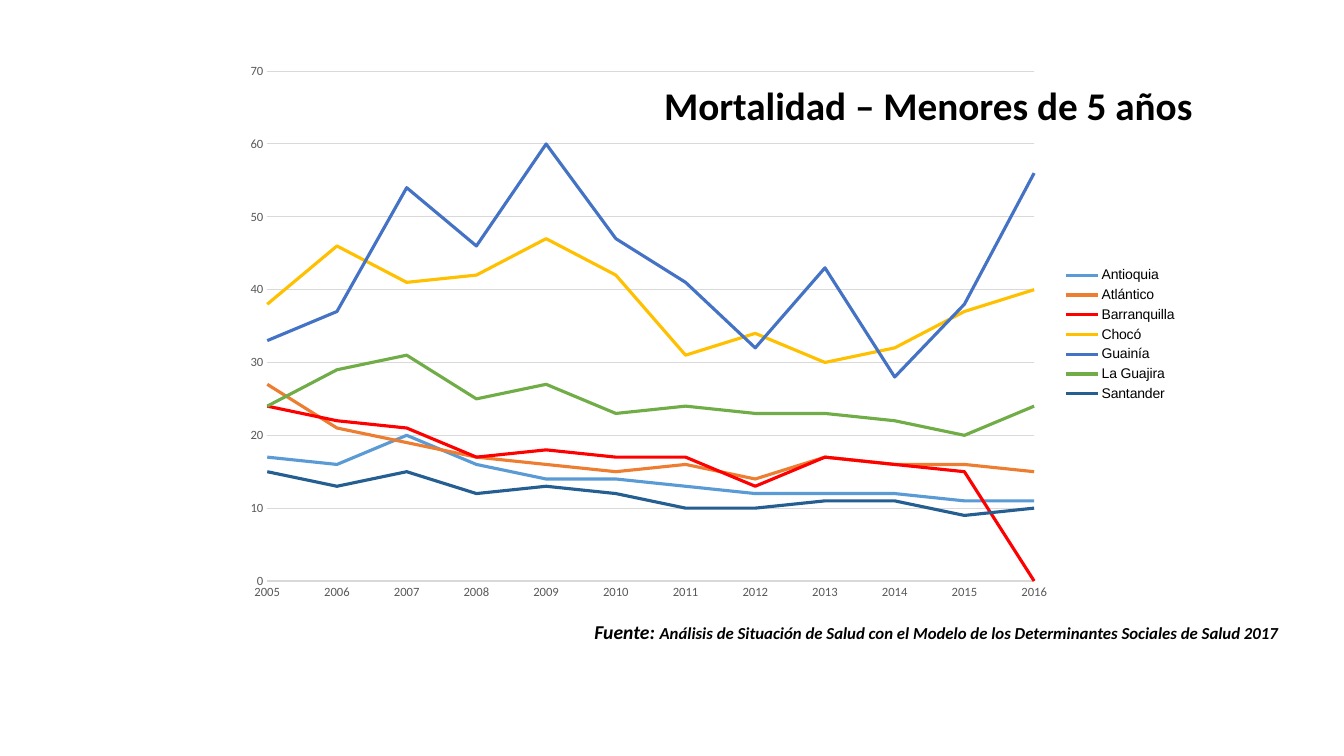
from dataclasses import dataclass

import lxml.etree
import pptx
import pptx.chart.axis
import pptx.chart.chart
import pptx.chart.data
import pptx.dml.color
import pptx.enum.chart
import pptx.enum.text
import pptx.oxml
import pptx.oxml.ns
import pptx.shapes.base
import pptx.text.text
import pptx.util
from pptx.util import Cm, Pt


@dataclass(frozen=True)
class Theme:
    text: str = "000000"
    axis_text: str = "595959"
    rule: str = "D9D9D9"
    font: str = "Calibri"
    legend_font: str = "Arial"
    title_size: float = 28
    source_label_size: float = 14
    source_size: float = 12
    legend_size: float = 10
    axis_size: float = 9
    rule_width: float = 0.75
    series_width: float = 2.25


@dataclass(frozen=True)
class Box:
    left: float
    top: float
    width: float
    height: float


@dataclass(frozen=True)
class Region:
    name: str
    color: str
    rates: tuple[int, ...]


THEME = Theme()
TITLE_BOX = Box(16.48, 1.93, 14.3, 1.45)
SOURCE_BOX = Box(14.73, 15.49, 17.83, 1.42)
CHART_BOX = Box(5.77, 1.37, 24.16, 14.12)
PLOT_FRACTIONS = {"x": 0.04, "y": 0.03, "w": 0.8, "h": 0.91}
YEARS = [str(year) for year in range(2005, 2017)]
REGIONS = [
    Region("Antioquia", "5B9BD5", (17, 16, 20, 16, 14, 14, 13, 12, 12, 12, 11, 11)),
    Region("Atlántico", "ED7D31", (27, 21, 19, 17, 16, 15, 16, 14, 17, 16, 16, 15)),
    Region("Barranquilla", "FF0000", (24, 22, 21, 17, 18, 17, 17, 13, 17, 16, 15, 0)),
    Region("Chocó", "FFC000", (38, 46, 41, 42, 47, 42, 31, 34, 30, 32, 37, 40)),
    Region("Guainía", "4472C4", (33, 37, 54, 46, 60, 47, 41, 32, 43, 28, 38, 56)),
    Region("La Guajira", "70AD47", (24, 29, 31, 25, 27, 23, 24, 23, 23, 22, 20, 24)),
    Region("Santander", "255E91", (15, 13, 15, 12, 13, 12, 10, 10, 11, 11, 9, 10)),
]


def rgb(color: str) -> pptx.dml.color.RGBColor:
    return pptx.dml.color.RGBColor.from_string(color)


def box_lengths(box: Box) -> tuple[pptx.util.Length, ...]:
    return Cm(box.left), Cm(box.top), Cm(box.width), Cm(box.height)


def style_font(font: pptx.text.text.Font, name: str, size: float, color: str) -> None:
    font.name, font.size = name, Pt(size)
    font.color.rgb = rgb(color)


def add_bold_run(paragraph: pptx.text.text._Paragraph, text: str, size: float,
                 italic: bool = False) -> None:
    run = paragraph.add_run()
    run.text = text
    style_font(run.font, THEME.font, size, THEME.text)
    run.font.bold, run.font.italic = True, italic


def prepare_text(shape: pptx.shapes.base.BaseShape, wrap: bool) -> pptx.text.text._Paragraph:
    frame = shape.text_frame
    frame.word_wrap = wrap
    frame.auto_size = pptx.enum.text.MSO_AUTO_SIZE.NONE
    frame.vertical_anchor = pptx.enum.text.MSO_ANCHOR.TOP
    paragraph = frame.paragraphs[0]
    paragraph.alignment = pptx.enum.text.PP_ALIGN.LEFT
    return paragraph


def style_axis(axis: pptx.chart.axis._BaseAxis) -> None:
    axis.major_tick_mark = axis.minor_tick_mark = pptx.enum.chart.XL_TICK_MARK.NONE
    style_font(axis.tick_labels.font, THEME.font, THEME.axis_size, THEME.axis_text)


def style_rule(line: pptx.dml.line.LineFormat) -> None:
    line.color.rgb = rgb(THEME.rule)
    line.width = Pt(THEME.rule_width)


def set_chart_frame(chart: pptx.chart.chart.Chart) -> None:
    """Fix the plot area, clear the background and start the lines on the value axis."""
    qn = pptx.oxml.ns.qn
    chart_space = chart.element
    plot_area = chart_space.find(".//" + qn("c:plotArea"))
    for layout in plot_area.findall(qn("c:layout")):
        plot_area.remove(layout)
    layout = lxml.etree.Element(qn("c:layout"))
    manual = lxml.etree.SubElement(layout, qn("c:manualLayout"))
    settings = {"layoutTarget": "inner", "xMode": "edge", "yMode": "edge", **PLOT_FRACTIONS}
    for tag, value in settings.items():
        lxml.etree.SubElement(manual, qn("c:" + tag)).set("val", str(value))
    plot_area.insert(0, layout)

    background = pptx.oxml.parse_xml(
        f"<c:spPr {pptx.oxml.ns.nsdecls('c', 'a')}><a:noFill/><a:ln><a:noFill/></a:ln></c:spPr>")
    chart_space.find(qn("c:chart")).addnext(background)

    value_axis = plot_area.find(qn("c:valAx"))
    crossing = value_axis.find(qn("c:crossBetween"))
    if crossing is None:
        crossing = lxml.etree.Element(qn("c:crossBetween"))
        value_axis.find(qn("c:crosses")).addnext(crossing)
    crossing.set("val", "midCat")


def add_mortality_chart(slide: pptx.slide.Slide) -> None:
    data = pptx.chart.data.CategoryChartData(number_format="General")
    data.categories = YEARS
    for region in REGIONS:
        data.add_series(region.name, region.rates)
    chart = slide.shapes.add_chart(
        pptx.enum.chart.XL_CHART_TYPE.LINE, *box_lengths(CHART_BOX), data).chart
    style_font(chart.font, THEME.legend_font, THEME.legend_size, THEME.text)
    chart.has_title = False
    chart.has_legend = True
    chart.legend.position = pptx.enum.chart.XL_LEGEND_POSITION.RIGHT
    chart.legend.include_in_layout = False

    chart.plots[0].vary_by_categories = False
    for series, region in zip(chart.plots[0].series, REGIONS):
        series.smooth = False
        series.marker.style = pptx.enum.chart.XL_MARKER_STYLE.NONE
        series.format.line.color.rgb = rgb(region.color)
        series.format.line.width = Pt(THEME.series_width)

    style_axis(chart.category_axis)
    style_rule(chart.category_axis.format.line)
    value_axis = chart.value_axis
    style_axis(value_axis)
    value_axis.format.line.fill.background()
    value_axis.has_major_gridlines = True
    style_rule(value_axis.major_gridlines.format.line)
    value_axis.minimum_scale, value_axis.maximum_scale = 0, 70
    value_axis.major_unit = 10
    set_chart_frame(chart)


def main() -> None:
    presentation = pptx.Presentation()
    presentation.slide_width, presentation.slide_height = Cm(33.87), Cm(19.05)
    slide = presentation.slides.add_slide(presentation.slide_layouts.get_by_name("Title Only"))

    title = slide.shapes.title
    title.left, title.top, title.width, title.height = box_lengths(TITLE_BOX)
    add_bold_run(prepare_text(title, wrap=True), "Mortalidad – Menores de 5 años",
                 THEME.title_size)

    source = prepare_text(slide.shapes.add_textbox(*box_lengths(SOURCE_BOX)), wrap=False)
    add_bold_run(source, "Fuente: ", THEME.source_label_size, italic=True)
    add_bold_run(source, "Análisis de Situación de Salud con el Modelo de los "
                 "Determinantes Sociales de Salud 2017", THEME.source_size, italic=True)

    add_mortality_chart(slide)
    presentation.save("out.pptx")


if __name__ == "__main__":
    main()
